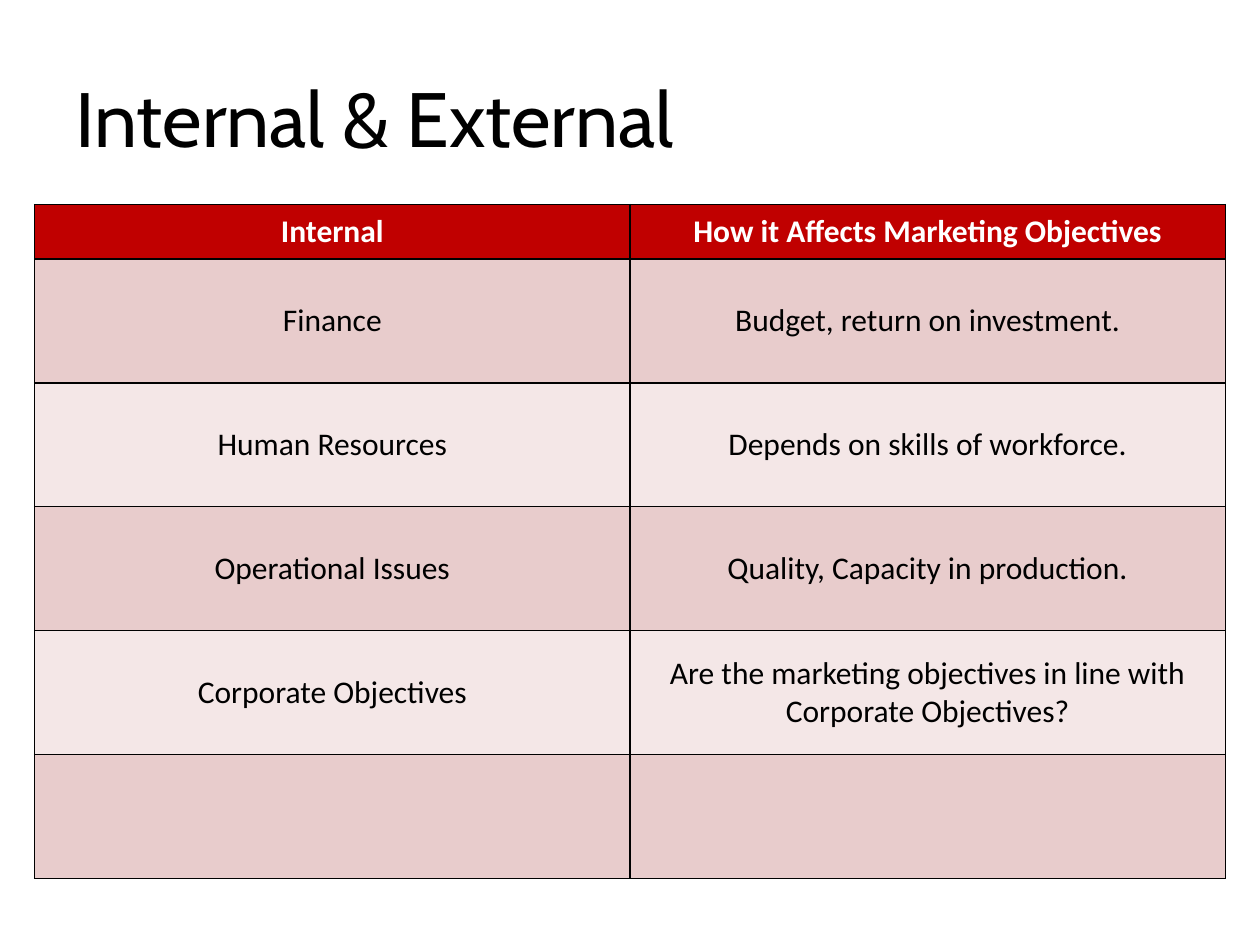
"""Build a slide with a table of internal influences on marketing objectives."""
from lxml import etree
from pptx import Presentation
from pptx.dml.color import RGBColor
from pptx.enum.text import MSO_ANCHOR, PP_ALIGN
from pptx.oxml.ns import qn
from pptx.util import Pt

LEFT, CENTER = PP_ALIGN.LEFT, PP_ALIGN.CENTER
MIDDLE = MSO_ANCHOR.MIDDLE
TITLE_ONLY = 5

COLORS = {
    "text": "000000",
    "border": "000000",
    "header": "C00000",
    "header_text": "FFFFFF",
    "odd": "E8CCCC",
    "even": "F4E7E7",
}
ROWS = [
    ("Internal", "How it Affects Marketing Objectives"),
    ("Finance", "Budget, return on investment."),
    ("Human Resources", "Depends on skills of workforce."),
    ("Operational Issues", "Quality, Capacity in production."),
    ("Corporate Objectives",
     "Are the marketing objectives in line with Corporate Objectives?"),
    ("", ""),
]
COL_WIDTH, HEADER_HEIGHT, ROW_HEIGHT = 340.2, 31, 70.85


def rgb(name):
    return RGBColor.from_string(COLORS[name])


def format_paragraph(p, font, size, color, align, bold=False):
    p.alignment = align
    p.font.name = font
    p.font.size = Pt(size)
    p.font.bold = bold
    p.font.color.rgb = rgb(color)


def add_title(s, text):
    sp = s.shapes.title
    sp.left, sp.top, sp.width, sp.height = Pt(36), Pt(21.6), Pt(648), Pt(90)
    tf = sp.text_frame
    tf.text = text
    tf.vertical_anchor = MIDDLE
    format_paragraph(tf.paragraphs[0], "Cabin", 44, "text", LEFT)


def set_borders(cell):
    tcPr = cell._tc.get_or_add_tcPr()
    for side in ("a:lnL", "a:lnR", "a:lnT", "a:lnB"):
        ln = etree.SubElement(tcPr, qn(side), w=str(Pt(1)))
        fill = etree.SubElement(ln, qn("a:solidFill"))
        etree.SubElement(fill, qn("a:srgbClr"), val=COLORS["border"])


def format_cell(cell, text, fill, color, bold):
    cell.text = text
    cell.vertical_anchor = MIDDLE
    set_borders(cell)
    cell.fill.solid()
    cell.fill.fore_color.rgb = rgb(fill)
    format_paragraph(cell.text_frame.paragraphs[0], "Calibri", 18, color,
                     CENTER, bold)


def add_influence_table(s, rows):
    cols = len(rows[0])
    height = HEADER_HEIGHT + ROW_HEIGHT * (len(rows) - 1)
    table = s.shapes.add_table(len(rows), cols, Pt(19.8), Pt(116.9),
                               Pt(COL_WIDTH * cols), Pt(height)).table
    for column in table.columns:
        column.width = Pt(COL_WIDTH)
    for i, texts in enumerate(rows):
        header = i == 0
        table.rows[i].height = Pt(HEADER_HEIGHT if header else ROW_HEIGHT)
        fill = "header" if header else ("odd" if i % 2 else "even")
        color = "header_text" if header else "text"
        for j, text in enumerate(texts):
            format_cell(table.cell(i, j), text, fill, color, header)


def main():
    prs = Presentation()
    prs.slide_width, prs.slide_height = Pt(720), Pt(540)
    s = prs.slides.add_slide(prs.slide_layouts[TITLE_ONLY])
    add_title(s, "Internal & External")
    add_influence_table(s, ROWS)
    prs.save("out.pptx")


if __name__ == "__main__":
    main()
